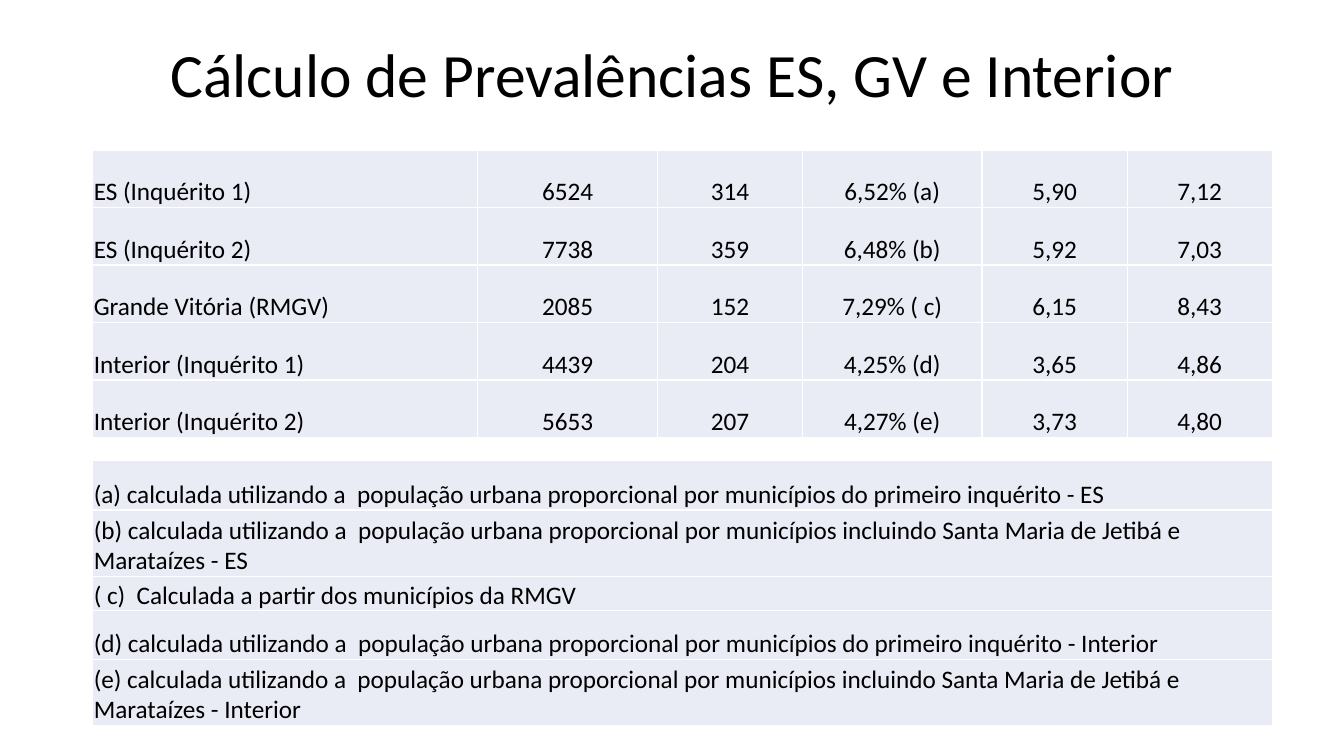
import dataclasses

import lxml.etree
import pptx
import pptx.dml.color
import pptx.enum.text
import pptx.oxml.ns
import pptx.util

Inches = pptx.util.Inches
ALIGN = pptx.enum.text.PP_ALIGN
ANCHOR = pptx.enum.text.MSO_ANCHOR


@dataclasses.dataclass(frozen=True)
class Theme:
    """Colours, font and type sizes of the slide."""
    font: str = "Calibri"
    ink: str = "000000"
    cell: str = "E9EBF5"
    border: str = "FFFFFF"
    border_width: float = 1
    title_size: int = 44
    body_size: int = 18


THEME = Theme()

PREVALENCES = [
    ["ES (Inquérito 1)", "6524", "314", "6,52% (a)", "5,90", "7,12"],
    ["ES (Inquérito 2)", "7738", "359", "6,48% (b)", "5,92", "7,03"],
    ["Grande Vitória (RMGV)", "2085", "152", "7,29% ( c)", "6,15", "8,43"],
    ["Interior (Inquérito 1)", "4439", "204", "4,25% (d)", "3,65", "4,86"],
    ["Interior (Inquérito 2)", "5653", "207", "4,27% (e)", "3,73", "4,80"],
]

FIRST_SURVEY = "calculada utilizando a  população urbana proporcional por municípios do primeiro inquérito"
SECOND_SURVEY = ("calculada utilizando a  população urbana proporcional por municípios "
                 "incluindo Santa Maria de Jetibá e Marataízes")
FOOTNOTES = [
    f"(a) {FIRST_SURVEY} - ES",
    f"(b) {SECOND_SURVEY} - ES",
    "( c)  Calculada a partir dos municípios da RMGV",
    f"(d) {FIRST_SURVEY} - Interior",
    f"(e) {SECOND_SURVEY} - Interior",
]


def write_text(frame, text, *, size, align=ALIGN.LEFT, line_spacing=None):
    """Write one formatted paragraph into a text frame."""
    frame.word_wrap = True
    paragraph = frame.paragraphs[0]
    paragraph.alignment = align
    paragraph.line_spacing = line_spacing
    run = paragraph.add_run()
    run.text = text
    run.font.name = THEME.font
    run.font.size = pptx.util.Pt(size)
    run.font.color.rgb = pptx.dml.color.RGBColor.from_string(THEME.ink)


def style_cell(cell):
    """Give a cell its borders, fill, margins and anchor."""
    qn = pptx.oxml.ns.qn
    properties = cell._tc.get_or_add_tcPr()
    for side in ("lnL", "lnR", "lnT", "lnB"):
        line = lxml.etree.SubElement(properties, qn(f"a:{side}"),
                                     w=str(pptx.util.Pt(THEME.border_width)))
        fill = lxml.etree.SubElement(line, qn("a:solidFill"))
        lxml.etree.SubElement(fill, qn("a:srgbClr"), val=THEME.border)
    cell.fill.solid()
    cell.fill.fore_color.rgb = pptx.dml.color.RGBColor.from_string(THEME.cell)
    cell.margin_left = cell.margin_right = cell.margin_top = Inches(0.01)
    cell.margin_bottom = 0
    cell.vertical_anchor = ANCHOR.BOTTOM


def add_title(slide, text, left, top, width, height):
    """Place the centred slide title in its box."""
    frame = slide.shapes.add_textbox(
        Inches(left), Inches(top), Inches(width), Inches(height)).text_frame
    frame.vertical_anchor = ANCHOR.MIDDLE
    write_text(frame, text, size=THEME.title_size, align=ALIGN.CENTER, line_spacing=0.9)


def add_grid(slide, rows, left, top, column_widths, row_heights):
    """Place a table whose first column is left-aligned and the others centred."""
    table = slide.shapes.add_table(
        len(rows), len(column_widths), Inches(left), Inches(top),
        Inches(sum(column_widths)), Inches(sum(row_heights))).table
    table.first_row = False
    table.horz_banding = False
    for column, width in zip(table.columns, column_widths):
        column.width = Inches(width)
    for row, height, texts in zip(table.rows, row_heights, rows):
        row.height = Inches(height)
        for index, (cell, text) in enumerate(zip(row.cells, texts)):
            style_cell(cell)
            write_text(cell.text_frame, text, size=THEME.body_size,
                       align=ALIGN.CENTER if index else ALIGN.LEFT)


def main():
    """Build the prevalence slide and save it."""
    presentation = pptx.Presentation()
    presentation.slide_width = Inches(13.33)
    presentation.slide_height = Inches(7.5)
    slide = presentation.slides.add_slide(presentation.slide_layouts[6])
    left = 0.92
    column_widths = [3.82, 1.78, 1.44, 1.78, 1.44, 1.44]
    add_title(slide, "Cálculo de Prevalências ES, GV e Interior", left, 0.04, 11.5, 1.45)
    add_grid(slide, PREVALENCES, left, 1.49, column_widths, [0.57] * len(PREVALENCES))
    add_grid(slide, [[note] for note in FOOTNOTES], left, 4.57,
             [sum(column_widths)], [0.49, 0.66, 0.34, 0.48, 0.66])
    presentation.save("out.pptx")


if __name__ == "__main__":
    main()
